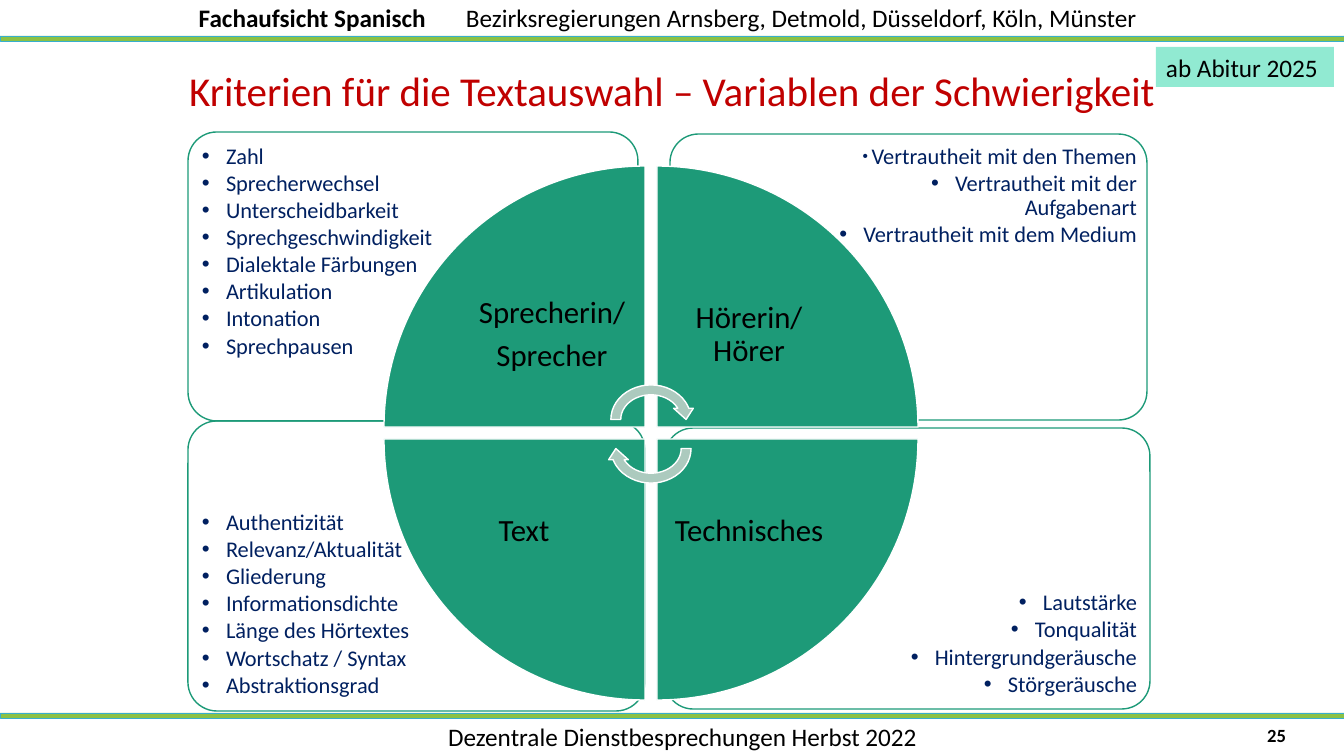
from lxml import etree
from pptx import Presentation
from pptx import util as u
from pptx.dml.color import RGBColor
from pptx.enum import shapes, text
from pptx.oxml.ns import qn

PX = 9144000 / 1008
COLORS = {
    "bar": "8BC145", "bar_line": "36AFCE", "title": "C00000",
    "list": "002060", "green": "1D9A78", "arrow": "ACCABE",
    "tag": "91EAD2", "white": "FFFFFF", "black": "000000",
}
KIND = shapes.MSO_SHAPE
LEFT, CENTER, RIGHT = text.PP_ALIGN.LEFT, text.PP_ALIGN.CENTER, text.PP_ALIGN.RIGHT
TOP, MIDDLE, BOTTOM = text.MSO_ANCHOR.TOP, text.MSO_ANCHOR.MIDDLE, text.MSO_ANCHOR.BOTTOM

deck = Presentation()
deck.slide_width, deck.slide_height = round(1344 * PX), round(756 * PX)
page = deck.slides.add_slide(deck.slide_layouts.get_by_name("Comparison"))


def draw(kind, area, fill, line=None, width=1):
    """Add a preset shape, or a text box when kind is None."""
    area = [round(value * PX) for value in area]
    if kind is None:
        return page.shapes.add_textbox(*area)
    shape = page.shapes.add_shape(kind, *area)
    shape.shadow.inherit = False
    shape.fill.solid()
    shape.fill.fore_color.rgb = RGBColor.from_string(COLORS[fill])
    if line:
        shape.line.color.rgb = RGBColor.from_string(COLORS[line])
        shape.line.width = u.Pt(width)
    else:
        shape.line.fill.background()
    return shape


def write(box, lines, size, color="black", align=LEFT, anchor=TOP,
          insets=(10, 5, 10, 5), bold=False, spacing=1.0, after=0):
    """Fill a box with paragraphs of one style; insets are left, top, right, bottom."""
    frame = box.text_frame
    frame.text = "\n".join(lines)
    frame.word_wrap = True
    frame.auto_size = text.MSO_AUTO_SIZE.NONE
    frame.vertical_anchor = anchor
    (frame.margin_left, frame.margin_top,
     frame.margin_right, frame.margin_bottom) = [round(inset * PX) for inset in insets]
    for para in frame.paragraphs:
        para.alignment = align
        para.line_spacing = spacing
        para.space_before, para.space_after = u.Pt(0), u.Pt(after)
        for span in para.runs:
            span.font.name, span.font.size, span.font.bold = "Calibri", u.Pt(size), bold
            span.font.color.rgb = RGBColor.from_string(COLORS[color])
    return frame.paragraphs


# Header and footer
for bar_top in (36, 713):
    draw(KIND.RECTANGLE, (0, bar_top, 1364, 5), "bar", "bar_line", 0.5)
for label, area, size, align, bold in (
    ("Fachaufsicht Spanisch", (136, -3, 300, 40), 18, RIGHT, True),
    ("Bezirksregierungen Arnsberg, Detmold, Düsseldorf, Köln, Münster",
     (456, -3, 720, 40), 18, LEFT, False),
    ("Dezentrale Dienstbesprechungen Herbst 2022", (341, 716, 683, 40), 18, CENTER, False),
    ("25", (1016, 719, 280, 29), 13.3, RIGHT, True),
):
    write(draw(None, area, None), [label], size, align=align, bold=bold)

# Title
title = page.shapes.title
title.left, title.top, title.width, title.height = [
    round(value * PX) for value in (50, 67, 1244, 67)]
write(title, ["Kriterien für die Textauswahl – Variablen der Schwierigkeit"],
      29.3, "title", CENTER, insets=(0, 4, 0, 0), spacing=0.9)

# Criteria lists: frame area, list area, inset, alignment, anchor, items
criteria = (
    ((665, 428, 485, 281), (816, 505, 328, 199), 7, RIGHT, BOTTOM,
     ["Lautstärke", "Tonqualität", "Hintergrundgeräusche", "Störgeräusche"]),
    ((188, 421, 457, 290), (195, 500, 307, 205), 7, LEFT, BOTTOM,
     ["Authentizität", "Relevanz/Aktualität", "Gliederung", "Informationsdichte",
      "Länge des Hörtextes", "Wortschatz / Syntax", "Abstraktionsgrad"]),
    ((670, 134, 477, 286), (820, 140, 322, 203), 5, RIGHT, TOP,
     ["Vertrautheit mit den Themen", "Vertrautheit mit der Aufgabenart",
      "Vertrautheit mit dem Medium"]),
    ((188, 132, 450, 289), (195, 138, 301, 205), 7, LEFT, TOP,
     ["Zahl", "Sprecherwechsel", "Unterscheidbarkeit", "Sprechgeschwindigkeit",
      "Dialektale Färbungen", "Artikulation", "Intonation", "Sprechpausen"]),
)
bodies = [holder for holder in page.placeholders if holder.placeholder_format.idx > 0]
for body, (frame_area, list_area, inset, align, anchor, items) in zip(bodies, criteria):
    outline = draw(KIND.ROUNDED_RECTANGLE, frame_area, "white", "green")
    outline.adjustments[0] = 0.1
    white = outline.element.spPr.find(qn("a:solidFill"))[0]
    etree.SubElement(white, qn("a:alpha"), val="90000")
    page.shapes[-1].element.addnext(body.element)
    body.left, body.top, body.width, body.height = [round(value * PX) for value in list_area]
    paras = write(body, items, 16, "list", align, anchor, [inset] * 4,
                  spacing=0.9, after=2.1)
    for para in paras:
        small = para.text == "Vertrautheit mit den Themen"
        indent = round((9 if small else 24) * PX)
        props = para._p.get_or_add_pPr()
        props.set("marL", str(indent))
        props.set("indent", str(-indent))
        if small:
            etree.SubElement(props, qn("a:buSzPct"), val="69000")
        etree.SubElement(props, qn("a:buFont"), typeface="Arial")
        etree.SubElement(props, qn("a:buChar"), char="•")

# Four wedges, clockwise from the upper left, with their labels
quarters = (
    (384, 166, 460, 243, 16, ["Sprecherin/", "Sprecher"]),
    (657, 166, 657, 243, 16, ["Hörerin/ Hörer"]),
    (657, 439, 657, 440, 16, ["Technisches"]),
    (384, 439, 460, 440, 72, ["Text"]),
)
for turn, (left, top, label_left, label_top, right_inset, lines) in enumerate(quarters):
    wedge = draw(KIND.PIE_WEDGE, (left, top, 261, 261), "green", "white")
    wedge.rotation = turn * 90
    label = draw(None, (label_left, label_top, 184, 184), None)
    write(label, lines, 22, align=CENTER, anchor=MIDDLE,
          insets=(16, 16, right_inset, 16), spacing=0.9, after=7)

# Rotating arrows in the middle
for arrow_top, angle in ((380, 0), (409, 180)):
    arrow = draw(KIND.CIRCULAR_ARROW, (606, arrow_top, 90, 79), "arrow", "white")
    arrow.rotation = angle

# Validity tag
tag = draw(KIND.RECTANGLE, (1156, 47, 178, 40), "tag")
write(tag, ["ab Abitur 2025"], 18)

deck.save("out.pptx")
